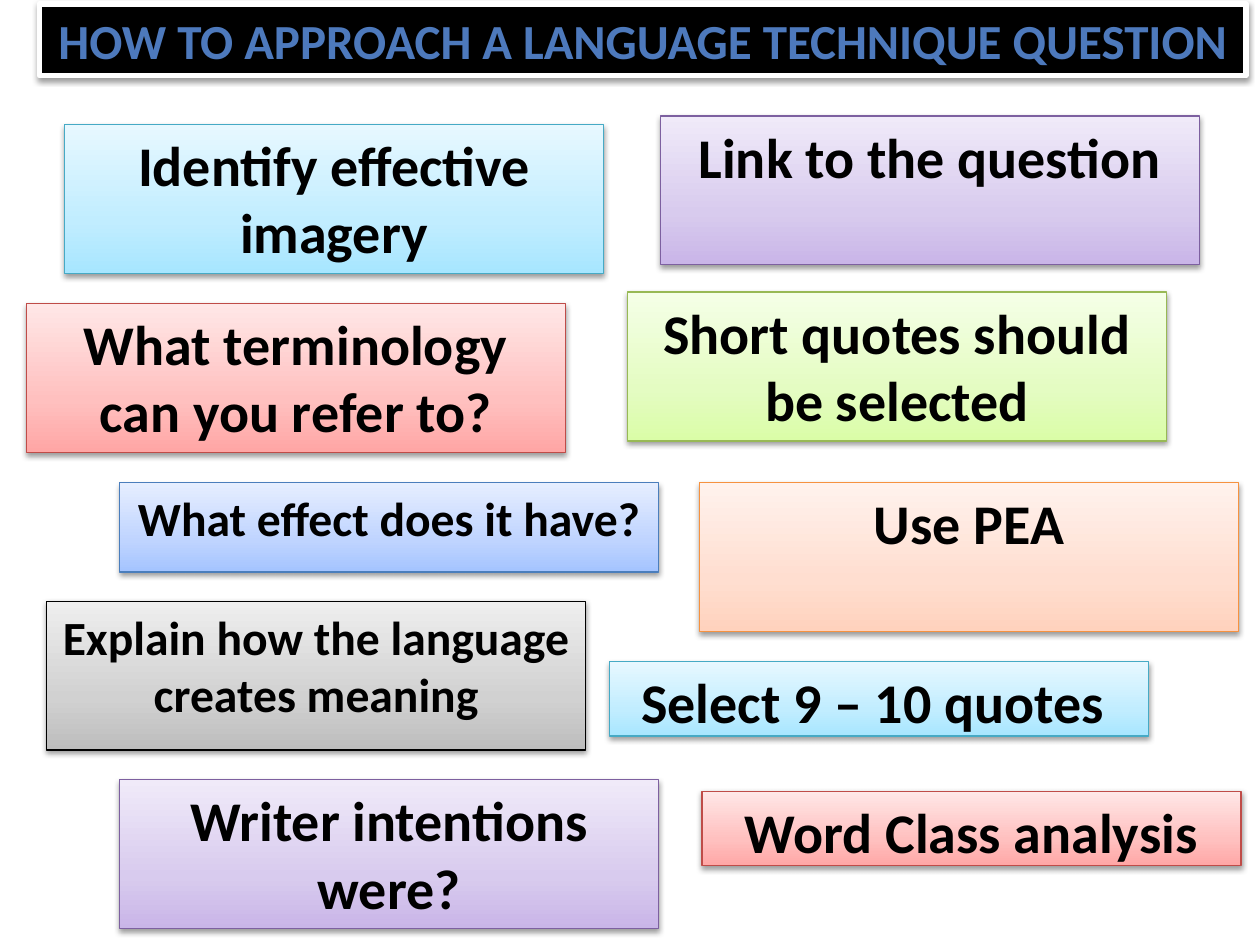
"""Build a slide of coloured tips on answering a language technique question."""
import copy

import lxml.etree
import pptx
import pptx.dml.color
import pptx.enum.shapes
import pptx.enum.text
import pptx.oxml
import pptx.oxml.ns
import pptx.util

Cm = pptx.util.Cm
Pt = pptx.util.Pt
NS = pptx.oxml.ns.nsdecls("a")
WIDE = 10.87
TALL, MID, LOW = 3, 1.8, 1.5

HUES = {
    "aqua": ("46AAC5", "A7E6FF", "C1EDFF", "E7F8FF"),
    "plum": ("7D60A0", "C9B5E8", "D8CBEE", "F0EAF9"),
    "lime": ("98B955", "DAFDA7", "E4FCC2", "F5FFE7"),
    "red": ("BF4C48", "FFA6A5", "FFC0BF", "FFE7E7"),
    "peach": ("F69240", "FFD2BD", "FFDED0", "FFF2ED"),
    "blue": ("4B7EBC", "A4C4FF", "BFD4FF", "E6EEFF"),
    "grey": ("000000", "BDBDBD", "D1D1D1", "EEEEEE"),
}
TITLE_STOPS = [(0, "7494C9"), (0.49, "4D79BC"), (0.5, "346AAA"),
               (0.92, "325F94"), (1, "315D91")]
TIPS = [
    ("Identify effective imagery", "aqua", 1.3, 2.51, TALL, 32),
    ("Link to the question", "plum", 13.31, 2.34, TALL, 32),
    ("Short quotes should be selected", "lime", 12.65, 5.89, TALL, 32),
    ("What terminology can you refer to?", "red", 0.53, 6.12, TALL, 32),
    ("Use PEA", "peach", 14.1, 9.73, TALL, 32),
    ("What effect does it have?", "blue", 2.41, 9.73, MID, 27.2),
    ("Explain how the language creates meaning", "grey", 0.94, 12.12, TALL, 27.2),
    ("Select 9 – 10 quotes ", "aqua", 12.29, 13.34, LOW, 32),
    ("Writer intentions were?", "plum", 2.41, 15.72, TALL, 32),
    ("Word Class analysis", "red", 14.15, 15.95, LOW, 32),
]


def paint(code):
    """Turn a hex string into a colour."""
    return pptx.dml.color.RGBColor.from_string(code)


def blend(fill, node, stops, angle):
    """Give a fill, whose XML lies in node, a linear gradient."""
    fill.gradient()
    fill.gradient_angle = angle
    group = node.find(".//" + pptx.oxml.ns.qn("a:gsLst"))
    while len(group) < len(stops):
        group.append(copy.deepcopy(group[-1]))
    for stop, (place, code) in zip(fill.gradient_stops, stops):
        stop.position = place
        stop.color.rgb = paint(code)


def shade(shape):
    """Drop a soft shadow below a shape."""
    shape.shadow.inherit = False
    glow = shape.element.spPr.find(pptx.oxml.ns.qn("a:effectLst"))
    glow.append(pptx.oxml.parse_xml(
        f'<a:outerShdw {NS} blurRad="40000" dist="20000" dir="5400000" '
        'rotWithShape="0"><a:srgbClr val="000000"><a:alpha val="38000"/>'
        '</a:srgbClr></a:outerShdw>'))


def block(slide, left, top, width, height, edge, weight):
    """Add a shadowed rectangle with an outline."""
    shape = slide.shapes.add_shape(
        pptx.enum.shapes.MSO_SHAPE.RECTANGLE,
        Cm(left), Cm(top), Cm(width), Cm(height))
    shape.line.color.rgb = paint(edge)
    shape.line.width = Pt(weight)
    shade(shape)
    return shape


def write(shape, text, size=32, before=0, wrap=True, stops=None):
    """Write bold centred text, outlined in black unless stops colour it."""
    frame = shape.text_frame
    frame.word_wrap = wrap
    frame.vertical_anchor = pptx.enum.text.MSO_ANCHOR.TOP
    para = frame.paragraphs[0]
    para.alignment = pptx.enum.text.PP_ALIGN.CENTER
    para.space_before = Pt(before)
    run = para.add_run()
    run.text = text
    font = run.font
    font.name, font.size, font.bold = "Calibri", Pt(size), True
    if stops:
        blend(font.fill, para._p, stops, 270)
        return
    font.color.rgb = paint("000000")
    run._r.get_or_add_rPr().insert(0, pptx.oxml.parse_xml(
        f'<a:ln {NS} w="9525"><a:solidFill><a:srgbClr val="000000"/>'
        '</a:solidFill></a:ln>'))


def title(slide):
    """Add the black heading bar."""
    bar = block(slide, 0.79, 0.08, 24.33, 1.45, "FFFFFF", 3)
    bar.fill.solid()
    bar.fill.fore_color.rgb = paint("000000")
    write(bar, "HOW TO APPROACH A LANGUAGE TECHNIQUE QUESTION",
          size=28, wrap=False, stops=TITLE_STOPS)


def tip(slide, text, hue, left, top, height, size):
    """Add one tip in a gradient box."""
    edge, *tones = HUES[hue]
    box = block(slide, left, top, WIDE, height, edge, 0.75)
    blend(box.fill, box.element.spPr, list(zip((0, 0.35, 1), tones)), 90)
    write(box, text, size=size, before=size * 0.2)


def main():
    """Build and save the slide."""
    deck = pptx.Presentation()
    deck.slide_width, deck.slide_height = Cm(25.4), Cm(19.05)
    slide = deck.slides.add_slide(deck.slide_layouts[6])
    title(slide)
    for item in TIPS:
        tip(slide, *item)
    deck.save("out.pptx")


if __name__ == "__main__":
    main()
